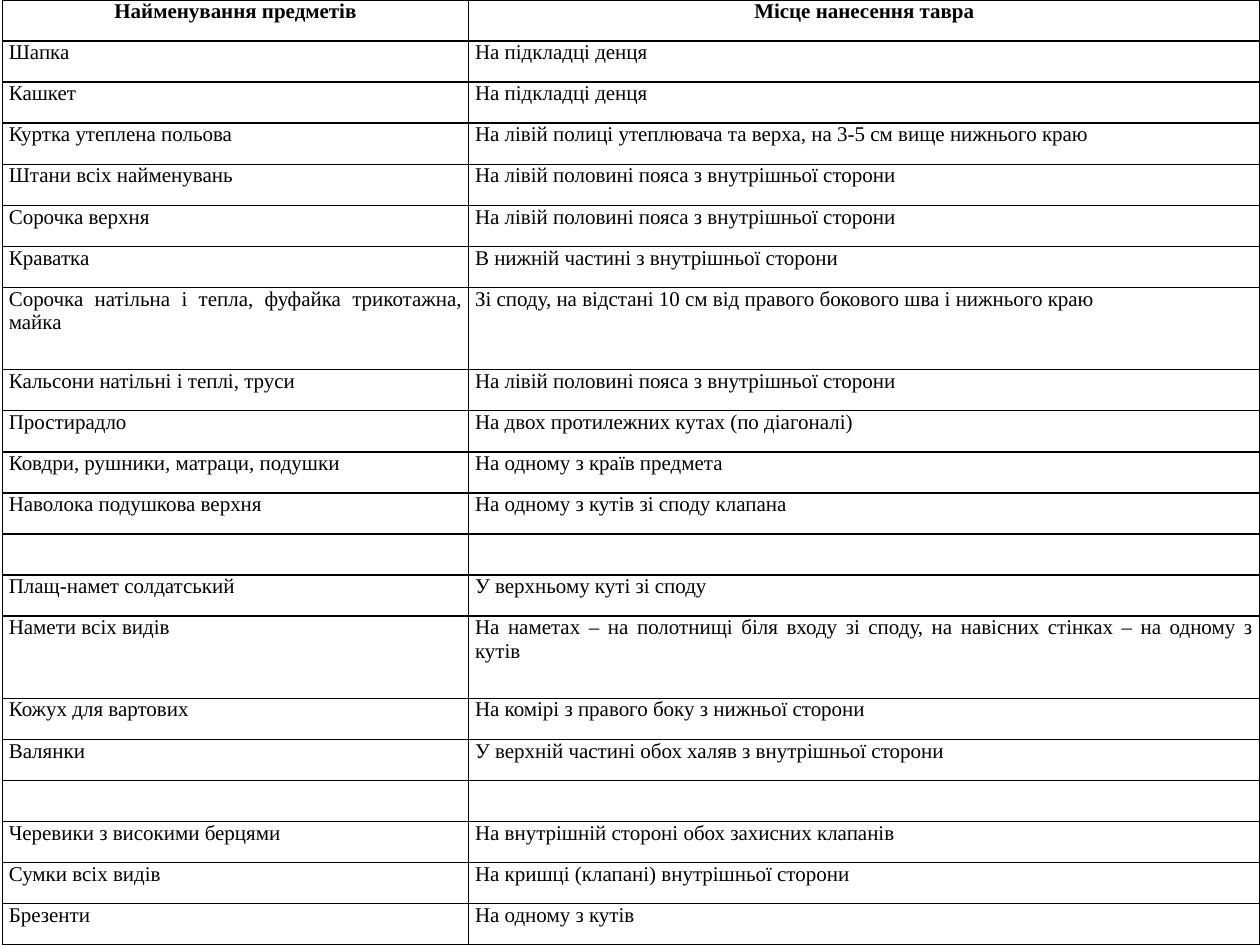
import dataclasses

import lxml.etree
import pptx
import pptx.dml.color
import pptx.enum.text
import pptx.oxml.ns
import pptx.util

Inches = pptx.util.Inches
Pt = pptx.util.Pt
Align = pptx.enum.text.PP_ALIGN
qn = pptx.oxml.ns.qn

HEADINGS = ("Найменування предметів", "Місце нанесення тавра")
WAIST = "На лівій половині пояса з внутрішньої сторони"
LINING = "На підкладці денця"
MARKINGS = [
    ("Шапка", LINING),
    ("Кашкет", LINING),
    ("Куртка утеплена польова",
     "На лівій полиці утеплювача та верха, на 3-5 см вище нижнього краю"),
    ("Штани всіх найменувань", WAIST),
    ("Сорочка верхня", WAIST),
    ("Краватка", "В нижній частині з внутрішньої сторони"),
    ("Сорочка натільна і тепла, фуфайка трикотажна, майка",
     "Зі споду, на відстані 10 см від правого бокового шва і нижнього краю"),
    ("Кальсони натільні і теплі, труси", WAIST),
    ("Простирадло", "На двох протилежних кутах (по діагоналі)"),
    ("Ковдри, рушники, матраци, подушки", "На одному з країв предмета"),
    ("Наволока подушкова верхня", "На одному з кутів зі споду клапана"),
    ("", ""),
    ("Плащ-намет солдатський", "У верхньому куті зі споду"),
    ("Намети всіх видів",
     "На наметах – на полотнищі біля входу зі споду, "
     "на навісних стінках – на одному з кутів"),
    ("Кожух для вартових", "На комірі з правого боку з нижньої сторони"),
    ("Валянки", "У верхній частині обох халяв з внутрішньої сторони"),
    ("", ""),
    ("Черевики з високими берцями", "На внутрішній стороні обох захисних клапанів"),
    ("Сумки всіх видів", "На кришці (клапані) внутрішньої сторони"),
    ("Брезенти", "На одному з кутів"),
]
DOUBLE_HEIGHT_ROWS = {7, 14}
COLUMN_WIDTHS = (3.7, 6.28)
SLIDE_WIDTH, SLIDE_HEIGHT = 10, 7.5


@dataclasses.dataclass(frozen=True)
class Theme:
    font: str = "Times New Roman"
    size: int = 12
    ink: str = "000000"
    border_width: int = 1
    side_margin: float = 0.05


class SlideBuilder:
    def __init__(self, slide, theme):
        self.slide = slide
        self.theme = theme

    def table(self, left, top, widths, heights, rows):
        frame = self.slide.shapes.add_table(
            len(rows), len(widths), Inches(left), Inches(top),
            Inches(sum(widths)), Inches(sum(heights)))
        table = frame.table
        table.horz_banding = False
        for column, width in zip(table.columns, widths):
            column.width = Inches(width)
        for row, height in zip(table.rows, heights):
            row.height = Inches(height)
        for row_index, texts in enumerate(rows):
            for column_index, text in enumerate(texts):
                self.cell(table.cell(row_index, column_index), text, row_index == 0)

    def cell(self, cell, text, heading):
        cell.margin_left = cell.margin_right = Inches(self.theme.side_margin)
        cell.margin_top = cell.margin_bottom = 0
        self.borders(cell)
        cell.fill.background()
        para = cell.text_frame.paragraphs[0]
        para.text = text
        para.alignment = Align.CENTER if heading else Align.JUSTIFY
        for span in para.runs:
            span.font.name = self.theme.font
            span.font.size = Pt(self.theme.size)
            span.font.bold = heading
            span.font.color.rgb = pptx.dml.color.RGBColor.from_string(self.theme.ink)
        if not text:
            # The end mark's size keeps an empty row from growing.
            lxml.etree.SubElement(
                para._p, qn("a:endParaRPr"), sz=str(self.theme.size * 100))

    def borders(self, cell):
        properties = cell._tc.get_or_add_tcPr()
        for side in ("lnL", "lnR", "lnT", "lnB"):
            line = lxml.etree.SubElement(
                properties, qn(f"a:{side}"), w=str(Pt(self.theme.border_width)))
            fill = lxml.etree.SubElement(line, qn("a:solidFill"))
            lxml.etree.SubElement(fill, qn("a:srgbClr"), val=self.theme.ink)


def main():
    deck = pptx.Presentation()
    deck.slide_width = Inches(SLIDE_WIDTH)
    deck.slide_height = Inches(SLIDE_HEIGHT)
    blank_layout = deck.slide_layouts[6]
    builder = SlideBuilder(deck.slides.add_slide(blank_layout), Theme())

    rows = [HEADINGS, *MARKINGS]
    unit = SLIDE_HEIGHT / (len(rows) + len(DOUBLE_HEIGHT_ROWS))
    heights = [unit * (2 if index in DOUBLE_HEIGHT_ROWS else 1)
               for index in range(len(rows))]
    builder.table(SLIDE_WIDTH - sum(COLUMN_WIDTHS), 0, COLUMN_WIDTHS, heights, rows)
    deck.save("out.pptx")


if __name__ == "__main__":
    main()
